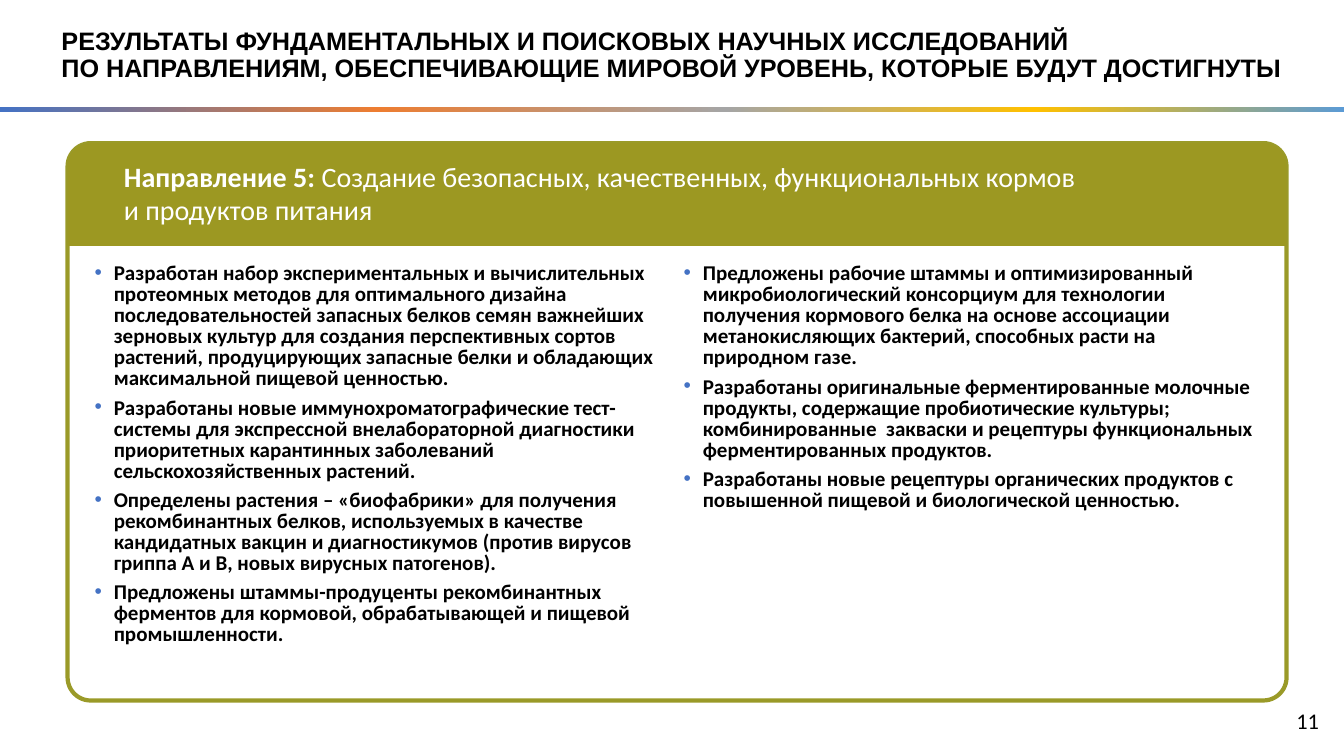
from dataclasses import dataclass

from lxml.etree import SubElement
from pptx import Presentation
from pptx.dml.color import RGBColor
from pptx.enum.shapes import MSO_SHAPE
from pptx.enum.text import MSO_ANCHOR, MSO_AUTO_SIZE, PP_ALIGN
from pptx.oxml.ns import qn
from pptx.util import Inches, Pt


@dataclass(frozen=True)
class Theme:
    head: str = "Arial"
    body: str = "Calibri"
    black: str = "000000"
    white: str = "FFFFFF"
    olive: str = "9C9822"
    edge: str = "9A9A28"
    bullet: str = "4472C4"
    stops: tuple = ((0, "4472C4"), (28, "ED7D31"), (54, "A5A5A5"),
                    (77, "FFC000"), (100, "5B9BD5"))
    title: int = 18
    topic: int = 20
    text: int = 15
    number: int = 16


THEME = Theme()
WIDTH, HEIGHT = 13.33, 7.5

TITLE = ("РЕЗУЛЬТАТЫ ФУНДАМЕНТАЛЬНЫХ И ПОИСКОВЫХ НАУЧНЫХ ИССЛЕДОВАНИЙ\v"
         "ПО НАПРАВЛЕНИЯМ, ОБЕСПЕЧИВАЮЩИЕ МИРОВОЙ УРОВЕНЬ, КОТОРЫЕ БУДУТ ДОСТИГНУТЫ")
LABEL = "Направление 5: "
TOPIC = "Создание безопасных, качественных, функциональных кормов и продуктов питания"
RESULTS = [
    "Разработан набор экспериментальных и вычислительных протеомных методов для "
    "оптимального дизайна последовательностей запасных белков семян важнейших "
    "зерновых культур для создания перспективных сортов растений, продуцирующих "
    "запасные белки и обладающих максимальной пищевой ценностью.",
    "Разработаны новые иммунохроматографические тест-системы для экспрессной "
    "внелабораторной диагностики приоритетных карантинных заболеваний "
    "сельскохозяйственных растений.",
    "Определены растения – «биофабрики» для получения рекомбинантных белков, "
    "используемых в качестве кандидатных вакцин и диагностикумов (против вирусов "
    "гриппа А и В, новых вирусных патогенов).",
    "Предложены штаммы-продуценты рекомбинантных ферментов для кормовой, "
    "обрабатывающей и пищевой промышленности.",
    "Предложены рабочие штаммы и оптимизированный микробиологический консорциум "
    "для технологии получения кормового белка на основе ассоциации "
    "метанокисляющих бактерий, способных расти на природном газе.",
    "Разработаны оригинальные ферментированные молочные продукты, содержащие "
    "пробиотические культуры; комбинированные  закваски и рецептуры "
    "функциональных ферментированных продуктов.",
    "Разработаны новые рецептуры органических продуктов с повышенной пищевой "
    "и биологической ценностью.",
]


def color(code):
    return RGBColor.from_string(code)


def style(run, size, code, bold=False, face=THEME.body):
    font = run.font
    font.name, font.size, font.bold = face, Pt(size), bold
    font.color.rgb = color(code)


def add_box(slide, box):
    frame = slide.shapes.add_textbox(*map(Inches, box)).text_frame
    frame.word_wrap = True
    return frame


def add_form(slide, kind, box, radius=None):
    form = slide.shapes.add_shape(kind, *map(Inches, box))
    form.shadow.inherit = False
    if radius is not None:
        form.adjustments[0] = radius / min(box[2:])
    return form


def add_title(slide, box):
    title = slide.shapes.title
    title.left, title.top, title.width, title.height = map(Inches, box)
    frame = title.text_frame
    frame.text = TITLE
    frame.word_wrap = True
    frame.auto_size = MSO_AUTO_SIZE.NONE
    frame.vertical_anchor = MSO_ANCHOR.MIDDLE
    para = frame.paragraphs[0]
    para.alignment, para.line_spacing = PP_ALIGN.LEFT, 0.9
    for run in para.runs:
        style(run, THEME.title, THEME.black, True, THEME.head)


def add_stripe(slide, box):
    stripe = add_form(slide, MSO_SHAPE.RECTANGLE, box)
    stripe.line.fill.background()
    stripe.fill.gradient()
    stripe.fill.gradient_angle = 0
    # Five colour stops in place of the default two
    stops = stripe.fill._fill._gradFill.find(qn("a:gsLst"))
    for stop in list(stops):
        stops.remove(stop)
    for place, code in THEME.stops:
        stop = SubElement(stops, qn("a:gs"), pos=str(place * 1000))
        SubElement(stop, qn("a:srgbClr"), val=code)


def add_bullet(para):
    props = para._p.get_or_add_pPr()
    props.set("marL", str(Inches(0.19)))
    props.set("indent", str(-Inches(0.19)))
    tint = SubElement(props, qn("a:buClr"))
    SubElement(tint, qn("a:srgbClr"), val=THEME.bullet)
    SubElement(props, qn("a:buFont"), typeface="Arial")
    SubElement(props, qn("a:buChar"), char="•")


def add_list(slide, box):
    frame = add_box(slide, box)
    frame.auto_size = MSO_AUTO_SIZE.NONE
    # Two columns; the box height sets where the text breaks
    props = frame._txBody.bodyPr
    props.set("numCol", "2")
    props.set("spcCol", str(Inches(0.16)))
    frame.text = "\n".join(RESULTS)
    for para in frame.paragraphs:
        para.line_spacing, para.space_after = Pt(15), Pt(6)
        add_bullet(para)
        style(para.runs[0], THEME.text, THEME.black, True)


def add_panel(slide, box):
    left, top, width, height = box
    radius = 0.23
    # Frame
    frame = add_form(slide, MSO_SHAPE.ROUNDED_RECTANGLE, box, radius)
    frame.fill.background()
    frame.line.color.rgb = color(THEME.edge)
    frame.line.width = Pt(3)
    # Header band
    band = add_form(slide, MSO_SHAPE.ROUND_2_SAME_RECTANGLE,
                    (left, top, width, 1.02), radius)
    band.fill.solid()
    band.fill.fore_color.rgb = color(THEME.olive)
    band.line.fill.background()
    # Topic
    para = add_box(slide, (left + 0.46, top + 0.11, 9.68, 0.77)).paragraphs[0]
    for text, bold in ((LABEL, True), (TOPIC, False)):
        run = para.add_run()
        run.text = text
        style(run, THEME.topic, THEME.white, bold)
    # Results
    add_list(slide, (left + 0.17, top + 1.15, width - 0.37, 4))


def add_number(slide, box):
    frame = add_box(slide, box)
    frame.text = "11"
    frame.vertical_anchor = MSO_ANCHOR.MIDDLE
    para = frame.paragraphs[0]
    para.alignment = PP_ALIGN.RIGHT
    style(para.runs[0], THEME.number, THEME.black)


def main():
    deck = Presentation()
    deck.slide_width, deck.slide_height = Inches(WIDTH), Inches(HEIGHT)
    slide = deck.slides.add_slide(deck.slide_layouts[5])
    add_title(slide, (0.51, 0, 12.34, 1.11))
    add_stripe(slide, (0, 1.06, WIDTH, 0.05))
    add_panel(slide, (0.67, 1.42, 12.09, 5.53))
    add_number(slide, (10.18, 6.95, 3, 0.4))
    deck.save("out.pptx")


if __name__ == "__main__":
    main()
